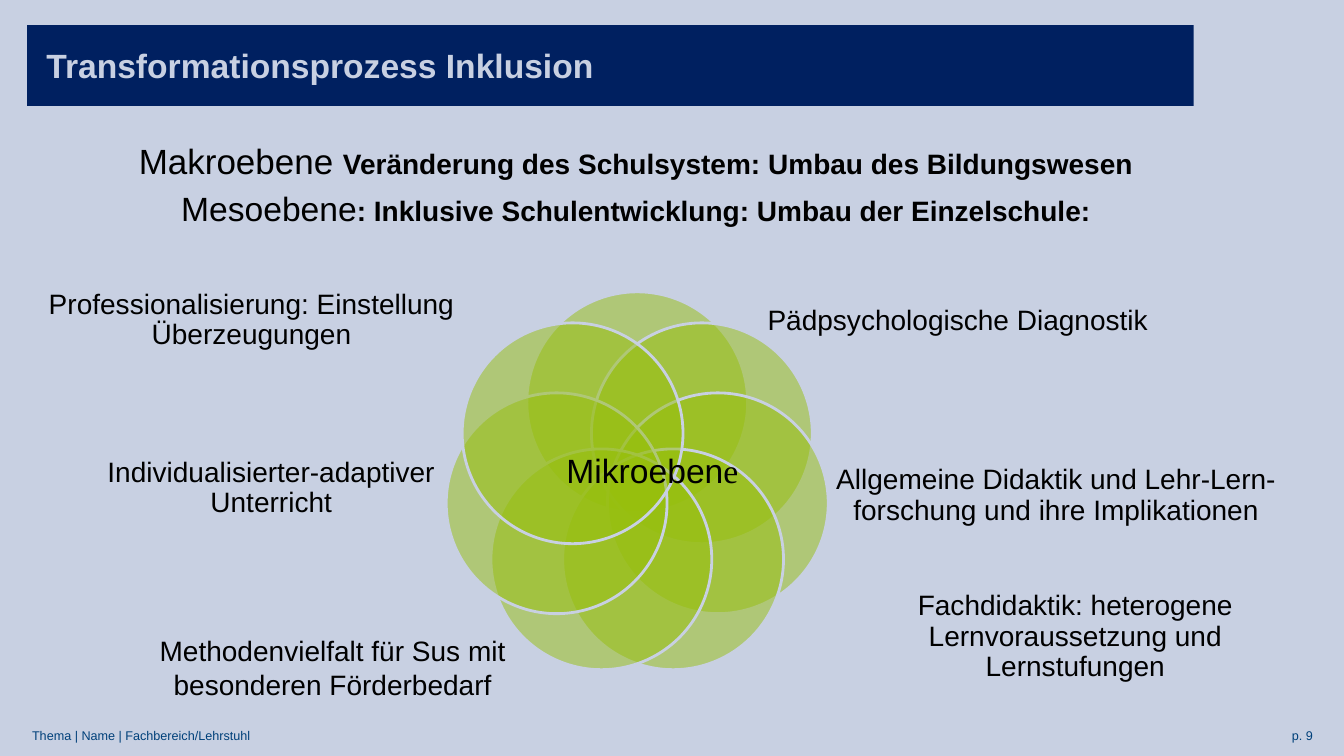
import math

import pptx
import pptx.dml.color
import pptx.enum.shapes
import pptx.enum.text
import pptx.oxml.ns
import pptx.util
from lxml import etree
from pptx.util import Inches

ALIGN = pptx.enum.text.PP_ALIGN
ANCHOR = pptx.enum.text.MSO_ANCHOR
SHAPES = pptx.enum.shapes.MSO_SHAPE

BACKGROUND, NAVY, GREEN, BLUE, BLACK = "C8D0E2", "002060", "97BF0D", "00407A", "000000"
PETAL_SIZE = 2.19
FLOWER_CENTER = (6.32, 4.81)
FLOWER_RADIUS = 0.82

# Left, top, width, height, text, line spacing; clockwise from the top right
PETAL_LABELS = [
    (7.41, 2.83, 4.18, 0.72, "Pädpsychologische Diagnostik", 0.9),
    (8.15, 4.37, 4.65, 1.1,
     "Allgemeine Didaktik und Lehr-Lern- forschung und ihre Implikationen", 0.9),
    (8.39, 5.6, 4.55, 1.44,
     "Fachdidaktik: heterogene Lernvoraussetzung und Lernstufungen", 0.9),
    (1.39, 6.01, 3.82, 1.22, "Methodenvielfalt für Sus mit besonderen Förderbedarf", 1.0),
    (0.45, 4.57, 4.48, 0.55, "Individualisierter-adaptiver Unterricht", 0.9),
    (0.46, 2.73, 4.07, 0.89, "Professionalisierung: Einstellung Überzeugungen", 0.9),
]
LEVELS = [
    [("Makroebene ", {"size": 25}),
     ("Veränderung des Schulsystem: Umbau des Bildungswesen", {"bold": True})],
    [("Mesoebene", {"size": 24}),
     (": Inklusive Schulentwicklung: Umbau der Einzelschule:", {"bold": True})],
]


def rgb(hex_color):
    return pptx.dml.color.RGBColor.from_string(hex_color)


def format_run(run, size=20, color=BLACK, name="Arial", bold=False):
    values = {"size": pptx.util.Pt(size), "name": name, "bold": bold}
    for attribute, value in values.items():
        setattr(run.font, attribute, value)
    run.font.color.rgb = rgb(color)


def fill_frame(frame, paragraphs, margin=0, anchor=ANCHOR.MIDDLE,
               align=ALIGN.CENTER, spacing=1.0):
    """Write paragraphs, each a list of (text, run format) pairs."""
    values = {"word_wrap": True, "vertical_anchor": anchor,
              "margin_left": Inches(margin), "margin_right": Inches(margin),
              "margin_top": Inches(margin / 2), "margin_bottom": Inches(margin / 2)}
    for attribute, value in values.items():
        setattr(frame, attribute, value)
    for index, runs in enumerate(paragraphs):
        paragraph = frame.add_paragraph() if index else frame.paragraphs[0]
        paragraph.alignment = align
        paragraph.line_spacing = spacing
        if index < len(paragraphs) - 1:
            paragraph.space_after = pptx.util.Pt(8)
        for text, run_format in runs:
            run = paragraph.add_run()
            run.text = text
            format_run(run, **run_format)


def add_text(slide, left, top, width, height, paragraphs, **frame_format):
    box = slide.shapes.add_textbox(*map(Inches, (left, top, width, height)))
    fill_frame(box.text_frame, paragraphs, **frame_format)


def add_filled_shape(slide, kind, left, top, width, height, color):
    shape = slide.shapes.add_shape(kind, *map(Inches, (left, top, width, height)))
    shape.shadow.inherit = False
    shape.fill.solid()
    shape.fill.fore_color.rgb = rgb(color)
    return shape


def add_title(slide, text):
    bar = add_filled_shape(slide, SHAPES.RECTANGLE, 0.27, 0.25, 11.57, 0.8, NAVY)
    bar.line.fill.background()
    fill_frame(bar.text_frame, [[(text, {"size": 24, "bold": True, "color": BACKGROUND})]],
               margin=0.19, align=ALIGN.LEFT)


def add_petal(slide, left, top):
    petal = add_filled_shape(slide, SHAPES.OVAL, left, top, PETAL_SIZE, PETAL_SIZE, GREEN)
    petal.line.color.rgb = rgb(BACKGROUND)
    petal.line.width = pptx.util.Pt(2)
    qn = pptx.oxml.ns.qn
    fill_color = petal.fill._xPr.find(qn("a:solidFill")).find(qn("a:srgbClr"))
    etree.SubElement(fill_color, qn("a:alpha"), val="50000")


def add_flower(slide, petal_count=7):
    center_x, center_y = FLOWER_CENTER
    for index in range(petal_count):
        angle = 2 * math.pi * index / petal_count
        add_petal(slide,
                  center_x + FLOWER_RADIUS * math.sin(angle) - PETAL_SIZE / 2,
                  center_y - FLOWER_RADIUS * math.cos(angle) - PETAL_SIZE / 2)


def add_footer(slide):
    small = {"size": 9, "color": BLUE}
    add_text(slide, 0.22, 7.17, 11, 0.25, [[("Thema | Name | Fachbereich/Lehrstuhl", small)]],
             margin=0.1, align=ALIGN.LEFT)
    add_text(slide, 11.56, 7.17, 1.56, 0.25, [[("p. 9", small)]],
             margin=0.1, align=ALIGN.RIGHT)


def main():
    presentation = pptx.Presentation()
    presentation.slide_width = Inches(13.33)
    presentation.slide_height = Inches(7.5)
    slide = presentation.slides.add_slide(presentation.slide_layouts[6])
    slide.background.fill.solid()
    slide.background.fill.fore_color.rgb = rgb(BACKGROUND)

    add_footer(slide)
    add_title(slide, "Transformationsprozess Inklusion")
    add_flower(slide)
    add_text(slide, 1.19, 1.28, 10.24, 1.14, LEVELS, spacing=0.9)
    for left, top, width, height, label, spacing in PETAL_LABELS:
        add_text(slide, left, top, width, height, [[(label, {})]], spacing=spacing)
    add_text(slide, 5.52, 4.41, 2, 0.5,
             [[("Mikroeben", {"size": 24}), ("e", {"size": 24, "name": "Times New Roman"})]],
             margin=0.1, anchor=ANCHOR.TOP, align=ALIGN.LEFT)
    presentation.save("out.pptx")


if __name__ == "__main__":
    main()
